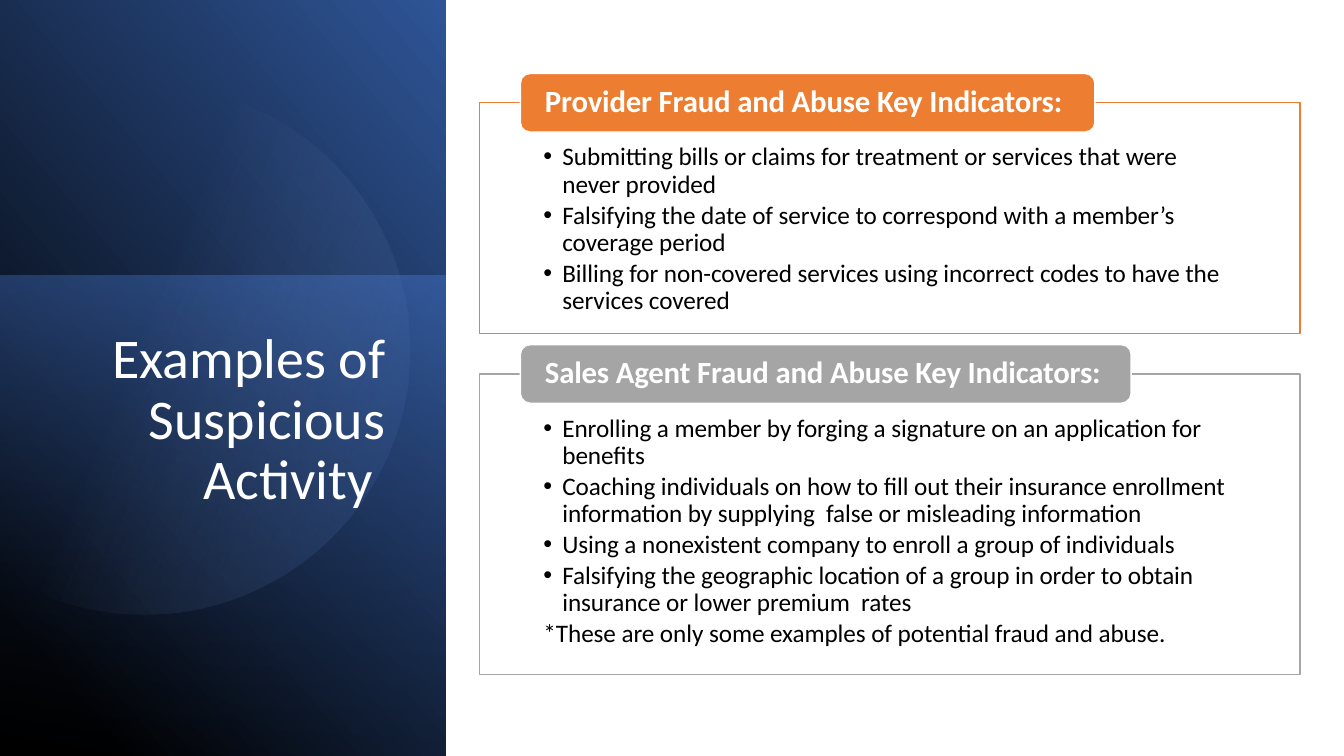
import math
import pptx
import pptx.dml.color
import pptx.enum.shapes
import pptx.enum.text
import pptx.util
from pptx.oxml.ns import qn
import lxml.etree

Pt = pptx.util.Pt
ALIGN = pptx.enum.text.PP_ALIGN
ANCHOR = pptx.enum.text.MSO_ANCHOR
SHAPE = pptx.enum.shapes.MSO_SHAPE
COLORS = {
    "black": "000000", "white": "FFFFFF", "navy": "203864", "deep": "2F5597",
    "blue": "4472C4", "pale": "8FAADC", "orange": "ED7D31", "gray": "A5A5A5",
}
CARDS = [
    ("Provider Fraud and Abuse Key Indicators:", "orange", 73.4, 165, 410.4, [
        "Submitting bills or claims for treatment or services that were never provided",
        "Falsifying the date of service to correspond with a member’s coverage period",
        "Billing for non-covered services using incorrect codes to have the services covered",
    ], None),
    ("Sales Agent Fraud and Abuse Key Indicators:", "gray", 267.1, 214.6, 436.3, [
        "Enrolling a member by forging a signature on an application for benefits",
        "Coaching individuals on how to fill out their insurance enrollment "
        "information by supplying  false or misleading information",
        "Using a nonexistent company to enroll a group of individuals",
        "Falsifying the geographic location of a group in order to obtain "
        "insurance or lower premium  rates",
    ], "*These are only some examples of potential fraud and abuse."),
]


def rgb(name):
    """Return the palette colour with this name."""
    return pptx.dml.color.RGBColor.from_string(COLORS[name])


def set_alpha(clr, percent):
    """Give a colour element an opacity in percent."""
    lxml.etree.SubElement(clr, qn("a:alpha")).set("val", str(percent * 1000))


def set_gradient(sp, stops, angle):
    """Fill a borderless shape with two (position, colour, opacity) stops."""
    sp.shadow.inherit = False
    sp.line.fill.background()
    sp.fill.gradient()
    sp.fill.gradient_angle = angle
    for stop, (position, color, opacity) in zip(sp.fill.gradient_stops, stops):
        stop.position = position
        stop.color.rgb = rgb(color)
    colors = sp._element.spPr.iter(qn("a:srgbClr"))
    for clr, (position, color, opacity) in zip(list(colors), stops):
        if opacity < 100:
            set_alpha(clr, opacity)


def add_box(slide, kind, x, y, w, h, fill, line):
    """Add a filled and outlined preset shape."""
    sp = slide.shapes.add_shape(kind, Pt(x), Pt(y), Pt(w), Pt(h))
    sp.shadow.inherit = False
    sp.fill.solid()
    sp.fill.fore_color.rgb = rgb(fill)
    sp.line.color.rgb = rgb(line)
    sp.line.width = Pt(1)
    return sp


def set_frame(tf, insets, anchor=ANCHOR.TOP):
    """Set wrapping, insets (left, top, right, bottom) and anchor."""
    tf.word_wrap = True
    tf.vertical_anchor = anchor
    tf.margin_left, tf.margin_top, tf.margin_right, tf.margin_bottom = map(Pt, insets)


def write(p, text, size=18, color="black", bold=False, align=ALIGN.LEFT,
          after=0, hanging=0, bullet=False, spacing=0):
    """Write text into a paragraph with its format."""
    p.alignment = align
    p.line_spacing = 0.9
    p.space_after = Pt(after)
    pPr = p._p.get_or_add_pPr()
    if hanging:
        pPr.set("marL", str(Pt(hanging)))
        pPr.set("indent", str(-Pt(hanging)))
    if bullet:
        lxml.etree.SubElement(pPr, qn("a:buFont")).set("typeface", "Arial")
        lxml.etree.SubElement(pPr, qn("a:buChar")).set("char", "•")
    r = p.add_run()
    r.text = text
    r.font.name = "Calibri"
    r.font.size = Pt(size)
    r.font.bold = bold
    r.font.color.rgb = rgb(color)
    if spacing:
        r._r.get_or_add_rPr().set("spc", str(spacing))


def add_disc(slide, x, y, cx, cy, radius):
    """Add a translucent disc cut off at the panel's left edge."""
    cut = math.acos(-cx / radius)
    angles = [cut * (i / 60 - 1) for i in range(121)]
    points = [(Pt(x + cx + radius * math.cos(a)), Pt(y + cy + radius * math.sin(a)))
              for a in angles]
    fb = slide.shapes.build_freeform(*points[0])
    fb.add_line_segments(points[1:], close=True)
    set_gradient(fb.convert_to_shape(),
                 [(0.39, "pale", 0), (1, "deep", 26)], 338)


def add_title_panel(slide, x, y, w, h, title):
    """Add the gradient side panel with its title."""
    base = slide.shapes.add_shape(SHAPE.RECTANGLE, Pt(x), Pt(y), Pt(w), Pt(h))
    set_gradient(base, [(0.11, "black", 100), (1, "deep", 100)], 40)
    glow_top = 197
    glow = slide.shapes.add_shape(
        SHAPE.RECTANGLE, Pt(x), Pt(y + glow_top), Pt(w), Pt(h - glow_top))
    set_gradient(glow, [(0, "blue", 50), (1, "navy", 0)], 260)
    add_disc(slide, x, y, 103, 249.8, 189.2)
    tb = slide.shapes.add_textbox(Pt(x + 41.8), Pt(y + 232.6), Pt(240.5), Pt(277.9))
    set_frame(tb.text_frame, (7.2, 3.6, 7.2, 3.6))
    write(tb.text_frame.paragraphs[0], title, size=40, color="white", align=ALIGN.RIGHT)


def add_card(slide, x, y, w, h, tab_w, heading, color, bullets, note):
    """Add an outlined list with a heading tab across its top edge."""
    box = add_box(slide, SHAPE.RECTANGLE, x, y, w, h, "white", color)
    set_alpha(box.fill._xPr.find(qn("a:solidFill"))[0], 90)
    tf = box.text_frame
    set_frame(tf, (45.5, 29.5, 45.5, 10))
    for i, text in enumerate(bullets + ([note] if note else [])):
        p = tf.add_paragraph() if i else tf.paragraphs[0]
        write(p, text, after=2.7, hanging=13.5, bullet=i < len(bullets), spacing=-5)
    tab_h = 41.8
    tab = add_box(slide, SHAPE.ROUNDED_RECTANGLE, x + 29, y - tab_h / 2,
                  tab_w, tab_h, color, "white")
    set_frame(tab.text_frame, (15.5, 0, 0, 0), ANCHOR.MIDDLE)
    write(tab.text_frame.paragraphs[0], heading, size=22, color="white",
          bold=True, spacing=-10)


def main():
    """Build the slide and save it."""
    prs = pptx.Presentation()
    prs.slide_width, prs.slide_height = Pt(960), Pt(540)
    slide = prs.slides.add_slide(prs.slide_layouts[6])
    add_title_panel(slide, 0, 0, 318.5, 540, "Examples of Suspicious Activity ")
    for heading, color, y, h, tab_w, bullets, note in CARDS:
        add_card(slide, 342.7, y, 586, h, tab_w, heading, color, bullets, note)
    prs.save("out.pptx")


if __name__ == "__main__":
    main()
